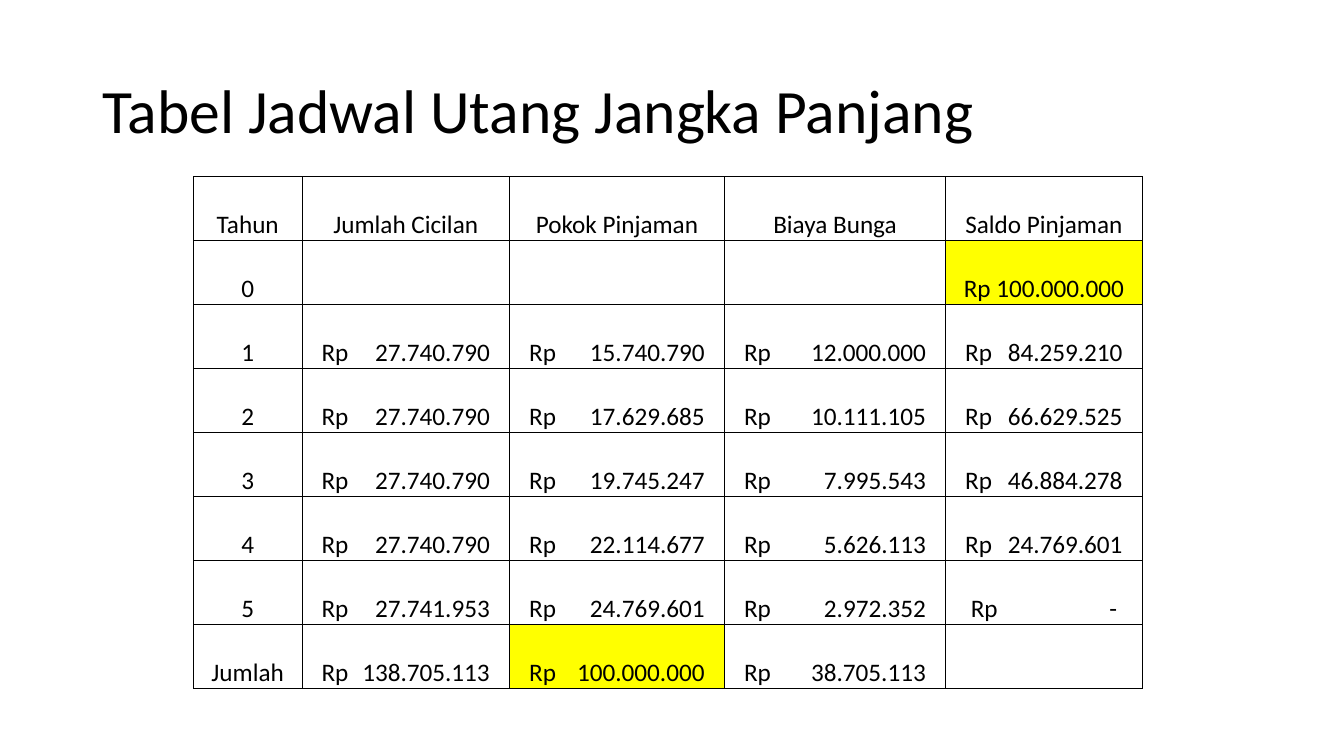
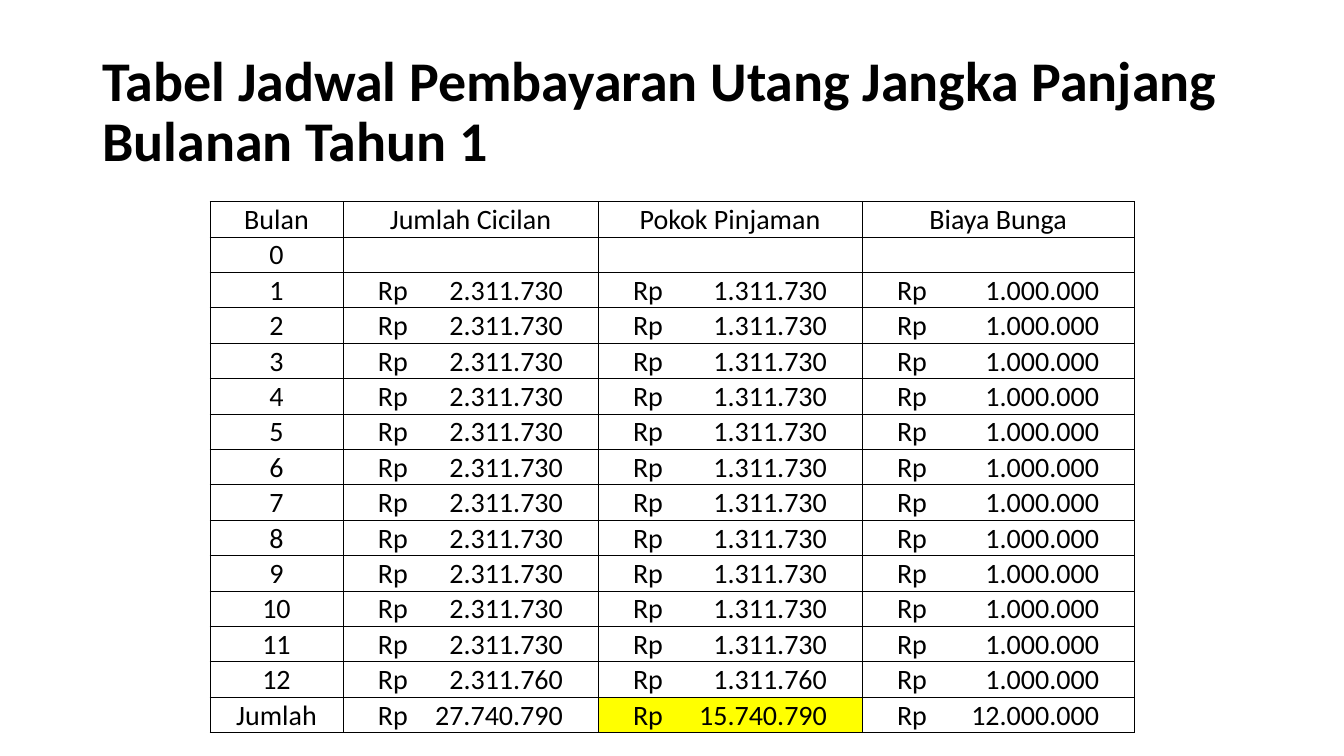
from lxml.etree import SubElement
from pptx import Presentation
from pptx.dml.color import RGBColor
from pptx.enum.text import MSO_ANCHOR, MSO_AUTO_SIZE, PP_ALIGN
from pptx.oxml.ns import qn
from pptx.util import Pt

COLORS = {"text": "000000", "border": "000000", "highlight": "FFFF00"}


class Deck:
    font_name = "Calibri"
    border_width = Pt(0.5)
    cell_margin = Pt(0.7)

    def __init__(self):
        self.presentation = Presentation()
        self.presentation.slide_width = Pt(960)
        self.presentation.slide_height = Pt(540)
        self.slide = None

    def style(self, paragraph, size, bold=False):
        font = paragraph.font
        font.name = self.font_name
        font.size = Pt(size)
        font.bold = bold
        font.color.rgb = RGBColor.from_string(COLORS["text"])

    def add_slide(self, heading, size, bold=False):
        layout = self.presentation.slide_layouts[5]
        self.slide = self.presentation.slides.add_slide(layout)
        title = self.slide.shapes.title
        title.left, title.top = Pt(66), Pt(28.75)
        title.width, title.height = Pt(828), Pt(104.4)
        frame = title.text_frame
        frame.text = heading
        frame.word_wrap = True
        frame.auto_size = MSO_AUTO_SIZE.NONE
        frame.vertical_anchor = MSO_ANCHOR.MIDDLE
        paragraph = frame.paragraphs[0]
        paragraph.alignment = PP_ALIGN.LEFT
        paragraph.line_spacing = 0.9
        self.style(paragraph, size, bold)

    def add_borders(self, cell):
        properties = cell._tc.get_or_add_tcPr()
        for side in ("a:lnL", "a:lnR", "a:lnT", "a:lnB"):
            line = SubElement(properties, qn(side), w=str(self.border_width))
            fill = SubElement(line, qn("a:solidFill"))
            SubElement(fill, qn("a:srgbClr"), val=COLORS["border"])

    def add_right_tab(self, paragraph, position):
        tabs = SubElement(paragraph._p.get_or_add_pPr(), qn("a:tabLst"))
        SubElement(tabs, qn("a:tab"), pos=str(int(position)), algn="r")

    def fill_cell(self, cell, text, size, highlighted):
        cell.vertical_anchor = MSO_ANCHOR.BOTTOM
        cell.margin_left = cell.margin_right = cell.margin_top = self.cell_margin
        cell.margin_bottom = 0
        self.add_borders(cell)
        if highlighted:
            cell.fill.solid()
            cell.fill.fore_color.rgb = RGBColor.from_string(COLORS["highlight"])
        else:
            cell.fill.background()
        paragraph = cell.text_frame.paragraphs[0]
        paragraph.text = text
        paragraph.alignment = PP_ALIGN.CENTER
        return paragraph

    def add_schedule(self, left, top, widths, row_height, rows, size, inset, highlights):
        frame = self.slide.shapes.add_table(
            len(rows), len(widths), Pt(left), Pt(top),
            Pt(sum(widths)), Pt(row_height * len(rows)))
        table = frame.table
        table.first_row = table.horz_banding = False
        for column, width in zip(table.columns, widths):
            column.width = Pt(width)
        for r, row in enumerate(rows):
            table.rows[r].height = Pt(row_height)
            for c, text in enumerate(row):
                cell = table.cell(r, c)
                paragraph = self.fill_cell(cell, text, size, (r, c) in highlights)
                if r and c and text and not text.startswith("Rp"):
                    indent = inset + 4 if text == "-" else inset
                    paragraph.text = f"Rp\t{text}"
                    paragraph.alignment = PP_ALIGN.LEFT
                    cell.margin_left = Pt(indent)
                    self.add_right_tab(paragraph, Pt(widths[c] - 2 * indent))
                self.style(paragraph, size)


def main():
    deck = Deck()

    yearly = [
        ("Tahun", "Jumlah Cicilan", "Pokok Pinjaman", "Biaya Bunga", "Saldo Pinjaman"),
        ("0", "", "", "", "Rp 100.000.000"),
        ("1", "27.740.790", "15.740.790", "12.000.000", "84.259.210"),
        ("2", "27.740.790", "17.629.685", "10.111.105", "66.629.525"),
        ("3", "27.740.790", "19.745.247", "7.995.543", "46.884.278"),
        ("4", "27.740.790", "22.114.677", "5.626.113", "24.769.601"),
        ("5", "27.741.953", "24.769.601", "2.972.352", "-"),
        ("Jumlah", "138.705.113", "100.000.000", "38.705.113", ""),
    ]
    deck.add_slide("Tabel Jadwal Utang Jangka Panjang", 44)
    deck.add_schedule(138.2, 126, (77.5, 148.3, 153.5, 158, 140.5), 45.7,
                      yearly, 18, 14, {(1, 4), (7, 2)})

    monthly = [
        ("Bulan", "Jumlah Cicilan", "Pokok Pinjaman", "Biaya Bunga"),
        ("0", "", "", ""),
        *((str(month), "2.311.730", "1.311.730", "1.000.000") for month in range(1, 12)),
        ("12", "2.311.760", "1.311.760", "1.000.000"),
        ("Jumlah", "27.740.790", "15.740.790", "12.000.000"),
    ]
    deck.add_slide("Tabel Jadwal Pembayaran Utang Jangka Panjang Bulanan Tahun 1", 40, True)
    deck.add_schedule(150, 144, (95, 182.2, 188.6, 194.4), 25.3,
                      monthly, 20, 25, {(14, 2)})

    deck.presentation.save("out.pptx")


if __name__ == "__main__":
    main()
